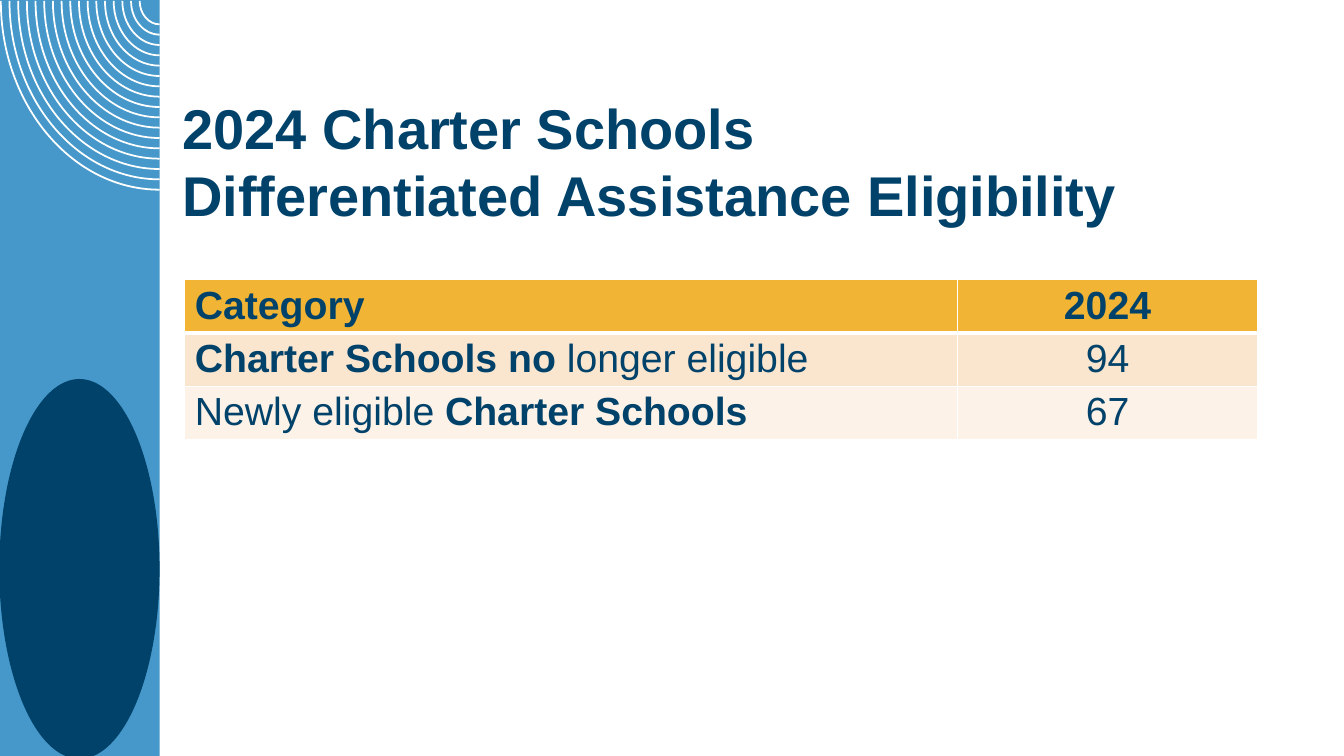
import lxml.etree
import pptx
import pptx.dml.color
import pptx.enum.shapes
import pptx.enum.text
import pptx.oxml.ns
import pptx.util

Pt = pptx.util.Pt
COLORS = {
    "navy": "01426A",
    "blue": "4698CA",
    "white": "FFFFFF",
    "gold": "F1B434",
    "peach": "FAE5CE",
    "cream": "FCF2E8",
}


def paint(fill, color):
    fill.solid()
    fill.fore_color.rgb = pptx.dml.color.RGBColor.from_string(COLORS[color])


def add_run(paragraph, text, size, bold):
    run = paragraph.add_run()
    run.text = text
    run.font.name = "Arial"
    run.font.size = Pt(size)
    run.font.bold = bold
    paint(run.font.fill, "navy")


presentation = pptx.Presentation()
presentation.slide_width = Pt(960)
presentation.slide_height = Pt(540)
slide = presentation.slides.add_slide(presentation.slide_layouts[5])

band_width = 114
sidebar = slide.shapes.add_shape(
    pptx.enum.shapes.MSO_SHAPE.RECTANGLE, 0, 0, Pt(band_width), Pt(540)
)

ring_count = 17
ring_top = 0.7
roundness = 0.55
rings = slide.shapes.build_freeform(Pt(0), Pt(ring_top), scale=1.0)
for ring in range(ring_count):
    outline = []
    for inset, direction in ((0, 1), (1.25, -1)):
        radius_x = band_width - 6.2 * ring - inset
        radius_y = 135.4 - 7.38 * ring - inset
        quarter = [(1, 0), (1, roundness), (roundness, 1), (0, 1)]
        for across, down in quarter[::direction]:
            x = band_width - radius_x * across
            y = ring_top + radius_y * down
            outline.append((Pt(x), Pt(y)))
    if ring:
        rings.move_to(*outline[0])
    rings.add_line_segments(outline[1:], close=True)
arcs = rings.convert_to_shape()

segments = list(arcs._element.iter(pptx.oxml.ns.qn("a:lnTo")))
segments_per_ring = 7
for ring in range(ring_count):
    for offset in (0, 4):
        start = ring * segments_per_ring + offset
        curve = lxml.etree.Element(pptx.oxml.ns.qn("a:cubicBezTo"))
        segments[start].addprevious(curve)
        for segment in segments[start:start + 3]:
            curve.append(segment[0])
            segment.getparent().remove(segment)

ellipse = slide.shapes.add_shape(
    pptx.enum.shapes.MSO_SHAPE.OVAL, Pt(-0.5), Pt(270.7), Pt(114.5), Pt(271.4)
)

for shape, color in ((sidebar, "blue"), (arcs, "white"), (ellipse, "navy")):
    paint(shape.fill, color)
    shape.line.fill.background()
    shape.shadow.inherit = False

title = slide.shapes.title
title.left, title.top, title.width, title.height = Pt(123.1), Pt(83.5), Pt(774.7), Pt(79.2)
frame = title.text_frame
frame.word_wrap = True
frame.auto_size = pptx.enum.text.MSO_AUTO_SIZE.NONE
frame.vertical_anchor = pptx.enum.text.MSO_ANCHOR.BOTTOM
frame.margin_left = frame.margin_right = Pt(7.2)
frame.margin_top = frame.margin_bottom = 0
paragraph = frame.paragraphs[0]
paragraph.alignment = pptx.enum.text.PP_ALIGN.LEFT
paragraph.line_spacing = Pt(48)
add_run(paragraph, "2024 Charter Schools", 40, True)
paragraph.add_line_break()
add_run(paragraph, "Differentiated Assistance Eligibility", 40, True)

rows = [
    ("gold", [[("Category", True)], [("2024", True)]]),
    ("peach", [[("Charter Schools no", True), (" longer eligible", False)], [("94", False)]]),
    ("cream", [[("Newly eligible ", False), ("Charter Schools", True)], [("67", False)]]),
]
row_height = 38.2
table = slide.shapes.add_table(
    len(rows), 2, Pt(132), Pt(199.6), Pt(766), Pt(row_height * len(rows))
).table
table.columns[0].width = Pt(552.2)
table.columns[1].width = Pt(213.8)
alignments = (pptx.enum.text.PP_ALIGN.LEFT, pptx.enum.text.PP_ALIGN.CENTER)

for row_index, (color, contents) in enumerate(rows):
    table.rows[row_index].height = Pt(row_height)
    for column_index, runs in enumerate(contents):
        cell = table.cell(row_index, column_index)
        cell.margin_top = cell.margin_bottom = Pt(3)
        properties = cell._tc.get_or_add_tcPr()
        for side in ("lnL", "lnR", "lnT", "lnB"):
            thick = (row_index, side) in ((0, "lnB"), (1, "lnT"))
            border = lxml.etree.SubElement(
                properties, pptx.oxml.ns.qn("a:" + side), w=str(Pt(3 if thick else 1))
            )
            border_fill = lxml.etree.SubElement(border, pptx.oxml.ns.qn("a:solidFill"))
            lxml.etree.SubElement(
                border_fill, pptx.oxml.ns.qn("a:srgbClr"), val=COLORS["white"]
            )
        paint(cell.fill, color)
        paragraph = cell.text_frame.paragraphs[0]
        paragraph.alignment = alignments[column_index]
        for text, bold in runs:
            add_run(paragraph, text, 28, bold)

presentation.save("out.pptx")
